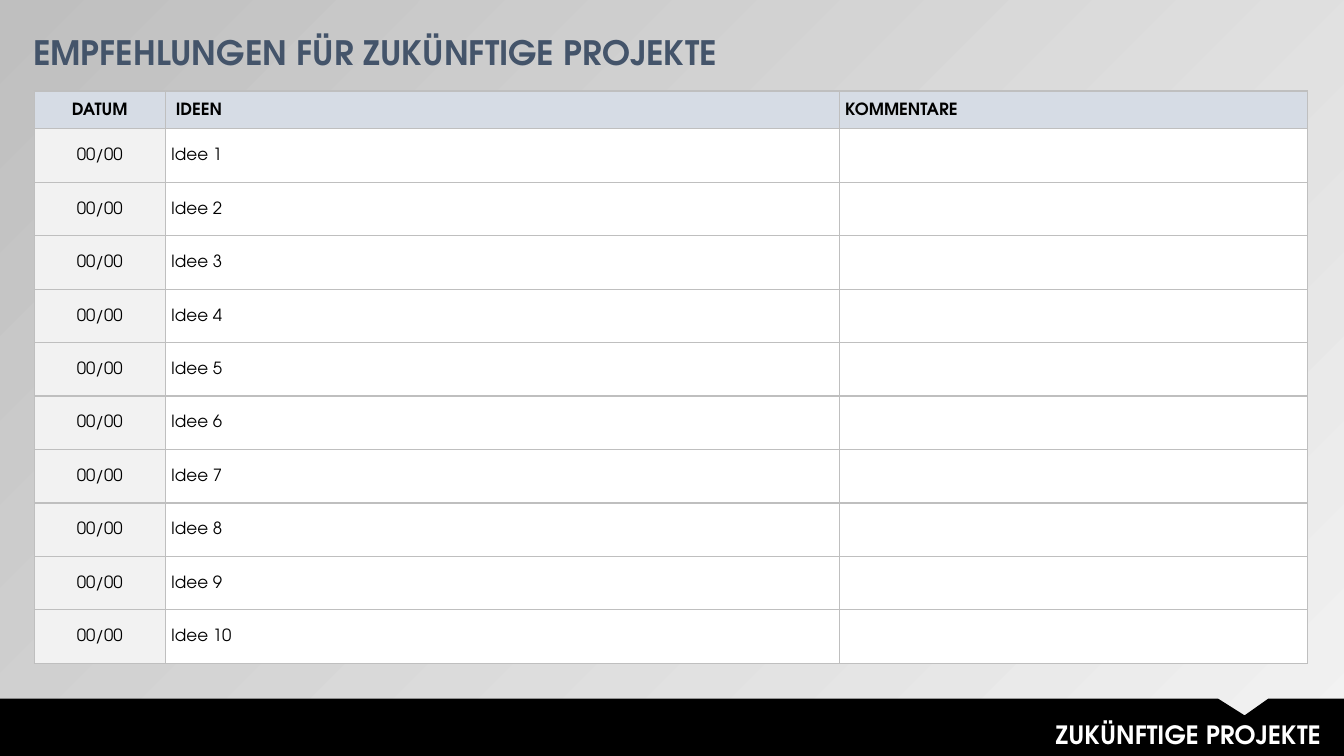
import pptx
import pptx.dml.color
import pptx.enum.text
import pptx.oxml
import pptx.oxml.ns
import pptx.util

Pt = pptx.util.Pt
ALIGN = pptx.enum.text.PP_ALIGN
ANCHOR = pptx.enum.text.MSO_ANCHOR
WIDTH, HEIGHT = 960, 540
COLORS = {
    "black": "000000",
    "white": "FFFFFF",
    "title": "44546A",
    "header": "D6DCE5",
    "date": "F2F2F2",
    "border": "BFBFBF",
    "light": "F2F2F2",
    "dark": "BFBFBF",
}


def rgb(name):
    return pptx.dml.color.RGBColor.from_string(COLORS[name])


def write(frame, text, font="TeX Gyre Adventor", size=12, color="black", bold=False,
          align=ALIGN.LEFT, line_spacing=None, space_before=None):
    paragraph = frame.paragraphs[0]
    paragraph.alignment = align
    if line_spacing:
        paragraph.line_spacing = line_spacing
    if space_before:
        paragraph.space_before = Pt(space_before)
    run = paragraph.add_run()
    run.text = text
    run.font.name = font
    run.font.size = Pt(size)
    run.font.bold = bold
    run.font.color.rgb = rgb(color)


class SlideBuilder:
    def __init__(self, presentation):
        self.slide = presentation.slides.add_slide(presentation.slide_layouts[6])

    def background(self, start, end, angle):
        fill = self.slide.background.fill
        fill.gradient()
        fill.gradient_angle = angle
        for stop, color in zip(fill.gradient_stops, (start, end)):
            stop.color.rgb = rgb(color)

    def outline(self, points, color):
        builder = self.slide.shapes.build_freeform(*points[0], scale=Pt(1))
        builder.add_line_segments(points[1:], close=True)
        shape = builder.convert_to_shape()
        shape.shadow.inherit = False
        shape.fill.solid()
        shape.fill.fore_color.rgb = rgb(color)
        shape.line.fill.background()

    def text(self, left, top, width, height, text, margins=(7.2, 3.6), **style):
        box = self.slide.shapes.add_textbox(Pt(left), Pt(top), Pt(width), Pt(height))
        frame = box.text_frame
        frame.word_wrap = True
        frame.auto_size = pptx.enum.text.MSO_AUTO_SIZE.SHAPE_TO_FIT_TEXT
        frame.margin_left = frame.margin_right = Pt(margins[0])
        frame.margin_top = frame.margin_bottom = Pt(margins[1])
        write(frame, text, **style)

    def table(self, left, top, widths, heights):
        frame = self.slide.shapes.add_table(
            len(heights), len(widths), Pt(left), Pt(top), Pt(sum(widths)), Pt(sum(heights)))
        table = frame.table
        for column, width in zip(table.columns, widths):
            column.width = Pt(width)
        for row, height in zip(table.rows, heights):
            row.height = Pt(height)
        return table

    def cell(self, cell, text, fill, indent=0, **style):
        cell.margin_left, cell.margin_right = Pt(4.3 + indent), Pt(4.3)
        cell.margin_top = cell.margin_bottom = Pt(0)
        cell.vertical_anchor = ANCHOR.MIDDLE
        properties = cell._tc.get_or_add_tcPr()
        for side in ("lnL", "lnR", "lnT", "lnB"):
            properties.append(pptx.oxml.parse_xml(
                f'<a:{side} {pptx.oxml.ns.nsdecls("a")} w="{Pt(1)}"><a:solidFill>'
                f'<a:srgbClr val="{COLORS["border"]}"/></a:solidFill></a:{side}>'))
        cell.fill.solid()
        cell.fill.fore_color.rgb = rgb(fill)
        if text:
            write(cell.text_frame, text, line_spacing=1.07, **style)


def main():
    presentation = pptx.Presentation()
    presentation.slide_width, presentation.slide_height = Pt(WIDTH), Pt(HEIGHT)
    builder = SlideBuilder(presentation)
    builder.background("light", "dark", 135)

    # Footer band with its notch
    band_top = 499
    builder.outline([(0, band_top), (870.5, band_top), (889, 511), (906.5, band_top),
                     (WIDTH, band_top), (WIDTH, HEIGHT), (0, HEIGHT)], "black")
    builder.text(298, 510, 652.5, 29, "ZUKÜNFTIGE PROJEKTE",
                 size=18, color="white", bold=True, align=ALIGN.RIGHT)

    # Table of ideas
    idea_count = 10
    table = builder.table(24.5, 65, [93.5, 481.5, 334.5], [27] + [38.2] * idea_count)
    aligns = [ALIGN.CENTER, ALIGN.LEFT, ALIGN.LEFT]
    headings = ["DATUM", "IDEEN", "KOMMENTARE"]
    for column, (heading, indent) in enumerate(zip(headings, [0, 3.3, 0])):
        builder.cell(table.cell(0, column), heading, "header",
                     indent=indent, bold=True, align=aligns[column])
    for row in range(1, idea_count + 1):
        values = ["00/00", f"Idee {row}", ""]
        for column, (value, fill) in enumerate(zip(values, ["date", "white", "white"])):
            builder.cell(table.cell(row, column), value, fill, align=aligns[column])

    # Title
    builder.text(15, 12.5, 549.5, 41, "EMPFEHLUNGEN FÜR ZUKÜNFTIGE PROJEKTE",
                 margins=(8.6, 4.3), size=24, color="title", bold=True,
                 line_spacing=1.2, space_before=4.8)

    presentation.save("out.pptx")


if __name__ == "__main__":
    main()
